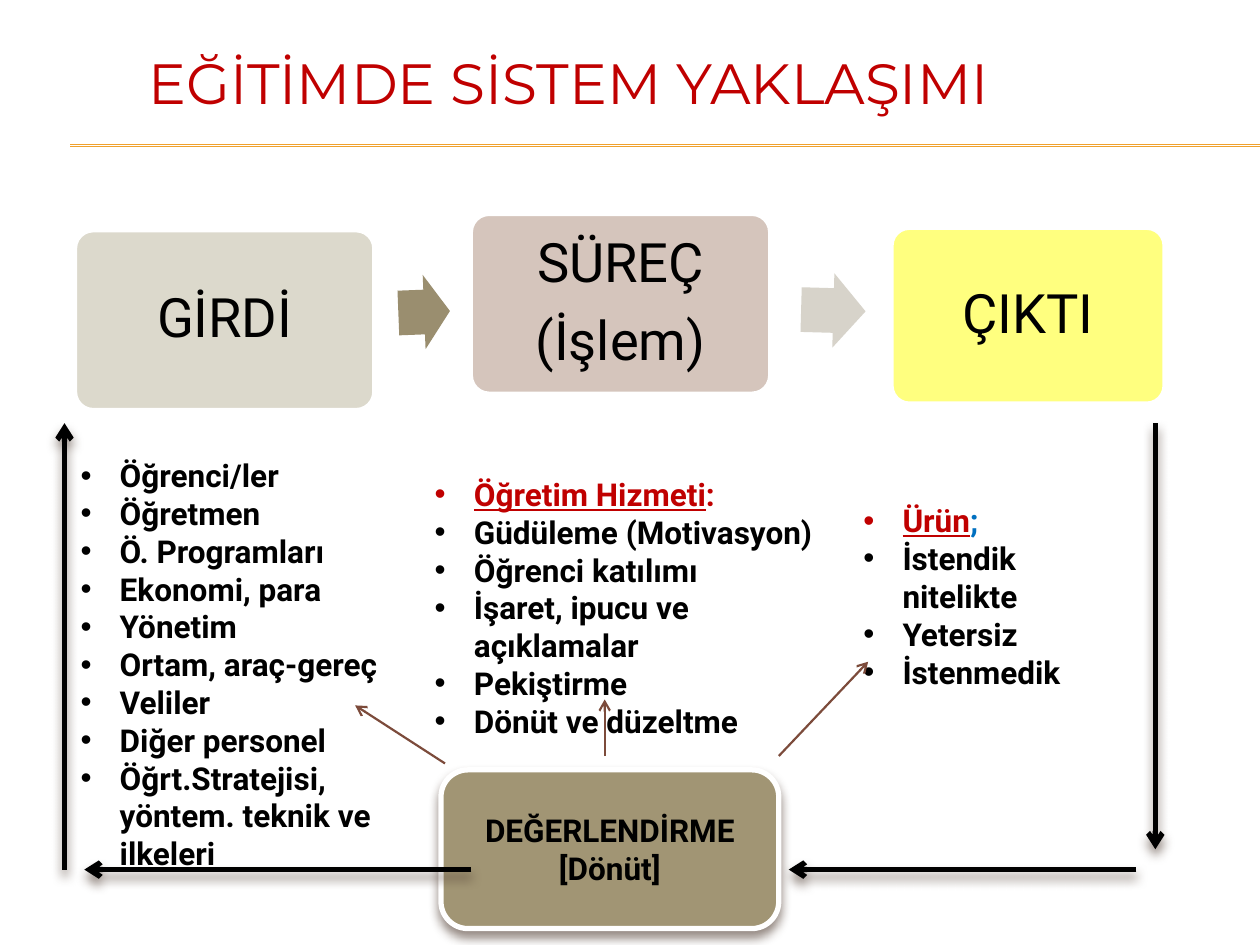
"""Build the slide on the systems approach in education."""
from dataclasses import dataclass
from typing import NamedTuple

from lxml.etree import SubElement
from pptx import Presentation
from pptx.dml.color import RGBColor
from pptx.enum.shapes import MSO_CONNECTOR, MSO_SHAPE
from pptx.enum.text import MSO_ANCHOR, MSO_AUTO_SIZE, PP_ALIGN
from pptx.oxml.ns import qn
from pptx.util import Cm, Pt

BLACK = RGBColor(0x00, 0x00, 0x00)
WHITE = RGBColor(0xFF, 0xFF, 0xFF)
RED = RGBColor(0xC0, 0x00, 0x00)
BLUE = RGBColor(0x00, 0x70, 0xC0)
GOLD = RGBColor(0xF0, 0xA2, 0x2E)
BROWN = RGBColor(0x7C, 0x4B, 0x3B)
SAND = RGBColor(0xD9, 0xD5, 0xC7)
ROSE = RGBColor(0xC4, 0xAD, 0xA0)
YELLOW = RGBColor(0xFF, 0xFF, 0x00)
KHAKI = RGBColor(0xA1, 0x95, 0x74)
OLIVE = RGBColor(0x9A, 0x8E, 0x6F)
STONE = RGBColor(0xD7, 0xD3, 0xCA)
SHADE = RGBColor(0x4E, 0x3B, 0x30)


class Area(NamedTuple):
    left: float
    top: float
    width: float
    height: float


class Path(NamedTuple):
    x1: float
    y1: float
    x2: float
    y2: float


@dataclass
class Span:
    text: str
    color: RGBColor = BLACK
    under: bool = False


@dataclass
class Box:
    area: Area
    lines: tuple[str, ...]
    fill: RGBColor
    alpha: int = 100
    size: float = 31
    bold: bool = False
    round: float = 0.1
    edge: float = 2
    after: float = 11
    space: float = 0.9
    inset: float = 0.43
    shade: bool = False


@dataclass
class Block:
    area: Area
    color: RGBColor
    turn: float


@dataclass
class List:
    area: Area
    head: tuple[Span, ...]
    items: tuple[str, ...]


STAGES = (
    Box(Area(1.52, 4.65, 6.02, 3.61), ("GİRDİ",), SAND, 90),
    Box(Area(9.5, 4.32, 6.02, 3.61), ("SÜREÇ", "(İşlem)"), ROSE, 70),
    Box(Area(17.98, 4.6, 5.49, 3.53), ("ÇIKTI",), YELLOW, 50),
)
REVIEW = Box(Area(8.89, 15.52, 6.81, 3.2), ("DEĞERLENDİRME", "[Dönüt]"), KHAKI,
             size=18, bold=True, round=0.17, edge=3, after=0, space=1,
             inset=0.25, shade=True)
BLOCKS = (
    Block(Area(8.03, 5.54, 1.04, 1.5), OLIVE, 357.8),
    Block(Area(16.15, 5.51, 1.3, 1.5), STONE, 1.6),
)
RULES = (Path(1.42, 2.92, 25.4, 2.92), Path(1.42, 2.95, 25.4, 2.95))
LOOP = (
    Path(23.29, 8.53, 23.29, 17.12),
    Path(22.91, 17.53, 15.9, 17.53),
    Path(9.5, 17.53, 1.7, 17.53),
    Path(1.3, 17.53, 1.3, 8.53),
)
LINKS = (
    Path(15.7, 15.24, 17.5, 13.34),
    Path(12.19, 15.24, 12.19, 14.1),
    Path(8.97, 15.39, 7.16, 14.22),
)
LISTS = (
    List(Area(1.37, 9.07, 7.52, 7.95), (Span("Öğrenci/ler"),),
         ("Öğretmen", "Ö. Programları", "Ekonomi, para", "Yönetim",
          "Ortam, araç-gereç", "Veliler", "Diğer personel",
          "Öğrt.Stratejisi, yöntem. teknik ve ilkeleri")),
    List(Area(8.51, 9.45, 8.71, 6.4),
         (Span("Öğretim Hizmeti", RED, True), Span(":", RED)),
         ("Güdüleme (Motivasyon)", "Öğrenci katılımı",
          "İşaret, ipucu ve açıklamalar", "Pekiştirme", "Dönüt ve düzeltme")),
    List(Area(17.15, 9.98, 5.77, 4.11),
         (Span("Ürün", RED, True), Span(";", BLUE)),
         ("İstendik nitelikte", "Yetersiz", "İstenmedik")),
)


def place(shape, area: Area) -> None:
    """Move and size a shape."""
    shape.left, shape.top, shape.width, shape.height = map(Cm, area)


def write(para, span: Span, size: float, bold: bool, face: str = "Roboto") -> None:
    """Add one run to a paragraph."""
    run = para.add_run()
    run.text = span.text
    font = run.font
    font.name, font.size, font.bold = face, Pt(size), bold
    font.underline = span.under
    font.color.rgb = span.color


def effect(shape, shade: bool) -> None:
    """Give a shape a soft shadow below it, or none."""
    props = shape._element.spPr
    for old in props.findall(qn("a:effectLst")):
        props.remove(old)
    group = SubElement(props, qn("a:effectLst"))
    if shade:
        cast = SubElement(group, qn("a:outerShdw"), blurRad=str(Pt(6)),
                          dist=str(Pt(4)), dir="5400000", rotWithShape="0")
        tint = SubElement(cast, qn("a:srgbClr"), val=str(SHADE))
        SubElement(tint, qn("a:alpha"), val="60000")


def line(shapes, path: Path, color: RGBColor, width: float,
         arrow: bool = True, shade: bool = False) -> None:
    """Draw a straight line with an optional arrowhead."""
    link = shapes.add_connector(MSO_CONNECTOR.STRAIGHT, *map(Cm, path))
    link.line.color.rgb = color
    link.line.width = Pt(width)
    if arrow:
        SubElement(link._element.spPr.find(qn("a:ln")), qn("a:tailEnd"), type="arrow")
    effect(link, shade)


def panel(shapes, box: Box) -> None:
    """Draw a rounded box with centred text."""
    shape = shapes.add_shape(MSO_SHAPE.ROUNDED_RECTANGLE, *map(Cm, box.area))
    shape.adjustments[0] = box.round
    shape.fill.solid()
    shape.fill.fore_color.rgb = box.fill
    tint = shape._element.spPr.find(qn("a:solidFill"))[0]
    SubElement(tint, qn("a:alpha"), val=str(box.alpha * 1000))
    shape.line.color.rgb = WHITE
    shape.line.width = Pt(box.edge)
    effect(shape, box.shade)
    frame = shape.text_frame
    frame.word_wrap = True
    frame.vertical_anchor = MSO_ANCHOR.MIDDLE
    frame.margin_left = frame.margin_right = Cm(box.inset)
    for row, text in enumerate(box.lines):
        para = frame.add_paragraph() if row else frame.paragraphs[0]
        para.alignment = PP_ALIGN.CENTER
        para.line_spacing, para.space_after = box.space, Pt(box.after)
        write(para, Span(text), box.size, box.bold)


def block(shapes, item: Block) -> None:
    """Draw a block arrow between two stages."""
    shape = shapes.add_shape(MSO_SHAPE.RIGHT_ARROW, *map(Cm, item.area))
    shape.adjustments[0], shape.adjustments[1] = 0.6, 0.5
    shape.rotation = item.turn
    shape.fill.solid()
    shape.fill.fore_color.rgb = item.color
    shape.line.fill.background()
    shape.shadow.inherit = False


def fill(shapes, body, data: List) -> None:
    """Fill a body placeholder with bullets and bring it to the front."""
    place(body, data.area)
    shapes._spTree.append(body._element)
    frame = body.text_frame
    frame.word_wrap, frame.auto_size = True, MSO_AUTO_SIZE.NONE
    frame.vertical_anchor = MSO_ANCHOR.TOP
    rows = (data.head, *((Span(text),) for text in data.items))
    for row, spans in enumerate(rows):
        para = frame.add_paragraph() if row else frame.paragraphs[0]
        para.space_before = Pt(0)
        props = para._p.get_or_add_pPr()
        props.set("marL", str(Cm(0.79)))
        props.set("indent", str(Cm(-0.79)))
        SubElement(props, qn("a:buFont"), typeface="Arial")
        SubElement(props, qn("a:buChar"), char="•")
        for span in spans:
            write(para, span, 18, True)


def main() -> None:
    """Compose and save the slide."""
    deck = Presentation()
    deck.slide_width, deck.slide_height = Cm(25.4), Cm(19.05)
    slide = deck.slides.add_slide(deck.slide_layouts[4])
    shapes = slide.shapes
    title, *bodies = slide.placeholders
    place(title, Area(2.74, 0.05, 19.69, 3.18))
    title.text_frame.vertical_anchor = MSO_ANCHOR.MIDDLE
    title.text_frame.auto_size = MSO_AUTO_SIZE.NONE
    head = title.text_frame.paragraphs[0]
    head.alignment = PP_ALIGN.LEFT
    write(head, Span("EĞİTİMDE SİSTEM YAKLAŞIMI", RED), 32.4, False, "Montserrat")
    for path in RULES:
        line(shapes, path, GOLD, 0.75, arrow=False)
    for box in (*STAGES, REVIEW):
        panel(shapes, box)
    for item in BLOCKS:
        block(shapes, item)
    for path in LOOP:
        line(shapes, path, BLACK, 3, shade=True)
    for body, data in zip(bodies, LISTS):
        fill(shapes, body, data)
    for spare in bodies[len(LISTS):]:
        shapes._spTree.remove(spare._element)
    for path in LINKS:
        line(shapes, path, BROWN, 1.25)
    deck.save("out.pptx")


if __name__ == "__main__":
    main()
